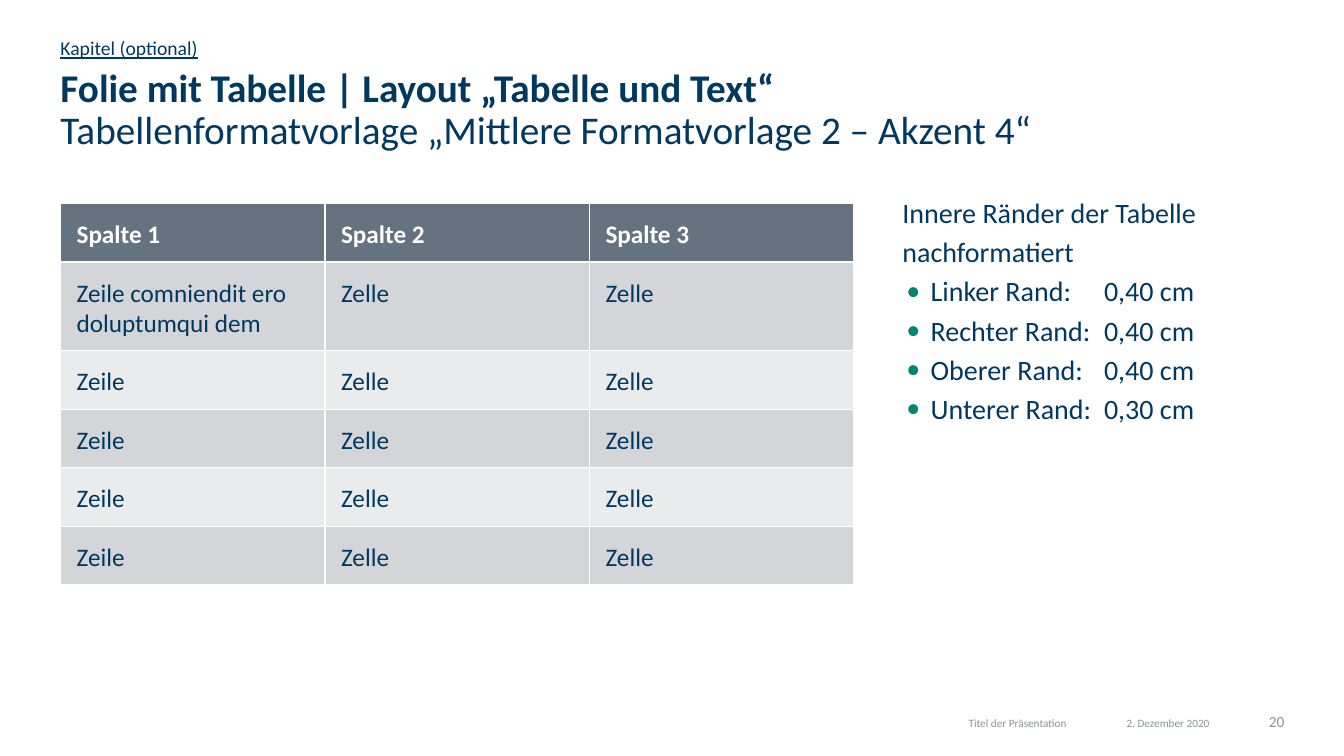
import pptx
import pptx.util
import pptx.dml.color
import pptx.enum.text
from dataclasses import dataclass
from lxml import etree
from pptx.oxml.ns import qn
from pptx.util import Inches


@dataclass(frozen=True)
class Theme:
    font: str = "Calibri"
    navy: str = "00385F"
    grey: str = "8C919D"
    white: str = "FFFFFF"
    green: str = "008570"
    header: str = "657280"
    bands: tuple = ("D3D5D8", "EAEBED")
    title: int = 28
    body: int = 20
    table: int = 18
    chapter: int = 14
    number: int = 11
    footer: int = 8


theme = Theme()
Align = pptx.enum.text.PP_ALIGN
Anchor = pptx.enum.text.MSO_ANCHOR


def style(para, size, color, bold=False):
    for span in para.runs:
        span.font.name = theme.font
        span.font.size = pptx.util.Pt(size)
        span.font.bold = bold
        span.font.color.rgb = pptx.dml.color.RGBColor.from_string(color)


def add_text(place, text, size, color, top=0, right=0, bottom=0):
    box = page.shapes.add_textbox(*[Inches(length) for length in place])
    frame = box.text_frame
    frame.word_wrap = True
    frame.margin_left, frame.margin_top = 0, Inches(top)
    frame.margin_right, frame.margin_bottom = Inches(right), Inches(bottom)
    frame.text = text
    for para in frame.paragraphs:
        style(para, size, color)
    return frame


deck = pptx.Presentation()
deck.slide_width, deck.slide_height = Inches(13.33), Inches(7.5)
page = deck.slides.add_slide(deck.slide_layouts[5])

# Title: bold first line, regular second line
title = page.shapes.title
title.left, title.top = Inches(0.6), Inches(0.68)
title.width, title.height = Inches(12.13), Inches(0.94)
frame = title.text_frame
frame.text = ("Folie mit Tabelle | Layout „Tabelle und Text“\v"
              "Tabellenformatvorlage „Mittlere Formatvorlage 2 – Akzent 4“")
frame.auto_size = pptx.enum.text.MSO_AUTO_SIZE.NONE
frame.vertical_anchor = Anchor.TOP
frame.margin_left = frame.margin_top = frame.margin_right = frame.margin_bottom = 0
para = frame.paragraphs[0]
para.alignment = Align.LEFT
para.line_spacing = 0.9
style(para, theme.title, theme.navy)
para.runs[0].font.bold = True
line_break = para._p.find(qn("a:br"))
etree.SubElement(line_break, qn("a:rPr"), sz=str(theme.title * 100))

# Chapter line
frame = add_text((0.6, 0.29, 12.13, 0.31), "Kapitel (optional)",
                 theme.chapter, theme.navy, bottom=0.01)
frame.vertical_anchor = Anchor.BOTTOM
frame.paragraphs[0].line_spacing = 1.17
frame.paragraphs[0].runs[0].font.underline = True

# Table: the default style supplies the white cell borders
rows = [["Spalte 1", "Spalte 2", "Spalte 3"],
        ["Zeile comniendit ero doluptumqui dem", "Zelle", "Zelle"]]
rows += [["Zeile", "Zelle", "Zelle"] for _ in range(4)]
table = page.shapes.add_table(len(rows), 3, Inches(0.6), Inches(2.02),
                              Inches(7.87), Inches(0.41 * len(rows))).table
for r, texts in enumerate(rows):
    fill = theme.bands[(r - 1) % 2] if r else theme.header
    for c, text in enumerate(texts):
        cell = table.cell(r, c)
        cell.text = text
        cell.margin_left = cell.margin_right = cell.margin_top = Inches(0.16)
        cell.margin_bottom = Inches(0.12)
        cell.fill.solid()
        cell.fill.fore_color.rgb = pptx.dml.color.RGBColor.from_string(fill)
        style(cell.text_frame.paragraphs[0], theme.table,
              theme.navy if r else theme.white, bold=r == 0)

# Margin notes with bullets and a tab stop for the values
margins = [("Linker", "0,40"), ("Rechter", "0,40"),
           ("Oberer", "0,40"), ("Unterer", "0,30")]
lines = ["Innere Ränder der Tabelle nachformatiert"]
lines += [f"{side} Rand:\t{size} cm" for side, size in margins]
frame = add_text((8.95, 1.86, 3.78, 4.88), "\n".join(lines),
                 theme.body, theme.navy, top=0.02)
for i, para in enumerate(frame.paragraphs):
    para.line_spacing = 1.17
    if i:
        para.level = 3
        props = para._p.get_or_add_pPr()
        props.set("marL", str(Inches(0.28)))
        props.set("indent", str(Inches(-0.24)))
        color = etree.SubElement(props, qn("a:buClr"))
        etree.SubElement(color, qn("a:srgbClr"), val=theme.green)
        etree.SubElement(props, qn("a:buFont"), typeface=theme.font)
        etree.SubElement(props, qn("a:buChar"), char="•")
        tabs = etree.SubElement(props, qn("a:tabLst"))
        etree.SubElement(tabs, qn("a:tab"), pos=str(Inches(2)), algn="l")

# Footer: presentation title, date, page number
footers = [
    ((5.88, 7.06, 4.72, 0.16), "Titel der Präsentation", theme.footer, 0.05, 0.02, Align.RIGHT),
    ((10.76, 7.06, 1.65, 0.16), "2. Dezember 2020", theme.footer, 0.05, 0, Align.CENTER),
    ((12.42, 7.06, 0.32, 0.16), "20", theme.number, 0.01, 0, Align.RIGHT),
]
for place, text, size, top, right, align in footers:
    frame = add_text(place, text, size, theme.grey, top=top, right=right)
    frame.paragraphs[0].alignment = align

deck.save("out.pptx")
